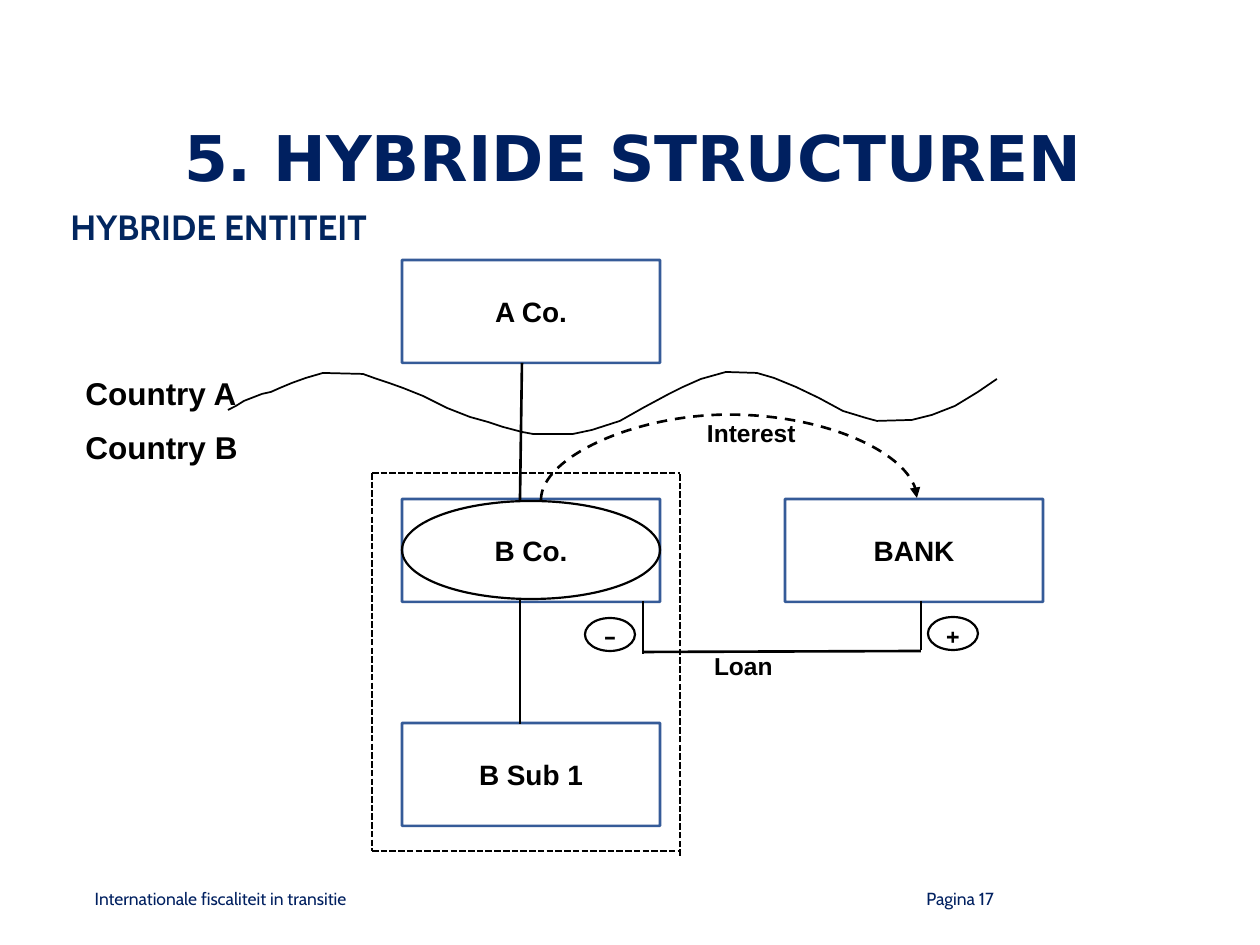
from dataclasses import dataclass

from lxml.etree import SubElement
from pptx import Presentation
from pptx.dml.color import RGBColor
from pptx.enum.dml import MSO_LINE as DASH
from pptx.enum.shapes import MSO_CONNECTOR as CONN, MSO_SHAPE as SHAPE
from pptx.enum.text import MSO_ANCHOR as ANCHOR, PP_ALIGN as ALIGN
from pptx.oxml.ns import qn
from pptx.util import Pt

PX = 914400 / 126


@dataclass(frozen=True)
class Theme:
    navy: str = "002060"
    heading: str = "02265F"
    box_line: str = "03327F"
    black: str = "000000"
    title_size: int = 36
    heading_size: int = 20
    country_size: int = 18
    box_size: int = 16
    label_size: int = 14
    footer_size: int = 10
    title_font: str = "DejaVu Sans"
    label_font: str = "Arial"
    body_font: str = "Cabin"


def write(sp, text, size, font, color, bold=True, align=ALIGN.LEFT, anchor=ANCHOR.TOP, inset=None):
    """Put one formatted line of text in a shape; inset is in px."""
    tf = sp.text_frame
    tf.word_wrap = True
    tf.vertical_anchor = anchor
    if inset is not None:
        tf.margin_left = tf.margin_right = tf.margin_top = tf.margin_bottom = round(inset * PX)
    tf.text = text
    p = tf.paragraphs[0]
    p.alignment = align
    f = p.runs[0].font
    f.size, f.name, f.bold = Pt(size), font, bold
    f.color.rgb = RGBColor.from_string(color)


def outline(sp, color, width, dash=None):
    """Give a shape or connector a plain line and no shadow."""
    sp.line.color.rgb = RGBColor.from_string(color)
    sp.line.width = Pt(width)
    if dash:
        sp.line.dash_style = dash
    if hasattr(sp, "fill"):
        sp.fill.background()
        sp.shadow.inherit = False
    else:
        SubElement(sp._element.spPr, qn("a:effectLst"))


t = Theme()
prs = Presentation()
prs.slide_width, prs.slide_height = round(1260 * PX), round(945 * PX)
s = prs.slides.add_slide(prs.slide_layouts[5])
shapes = s.shapes

title = shapes.title
title.left, title.top, title.width, title.height = [round(v * PX) for v in (57, 96, 1152, 120)]
write(title, "5. HYBRIDE STRUCTUREN", t.title_size, t.title_font, t.navy,
      align=ALIGN.CENTER, anchor=ANCHOR.MIDDLE)

# Companies
for name, x, y in [("A Co.", 402, 260), ("B Co.", 402, 499),
                   ("B Sub 1", 402, 723), ("BANK", 785, 499)]:
    sp = shapes.add_shape(SHAPE.RECTANGLE, *[round(v * PX) for v in (x, y, 258, 103)])
    outline(sp, t.box_line, 1.5)
    line_color = sp._element.spPr.find(".//" + qn("a:srgbClr"))
    SubElement(line_color, qn("a:alpha"), val="80000")
    write(sp, name, t.box_size, t.label_font, t.black,
          align=ALIGN.CENTER, anchor=ANCHOR.MIDDLE, inset=5)

# Hybrid entity and the signs on the loan
for sign, x, y, w, h in [("", 402, 501, 258, 98), ("-", 585, 618, 50, 33), ("+", 928, 617, 50, 33)]:
    sp = shapes.add_shape(SHAPE.OVAL, *[round(v * PX) for v in (x, y, w, h)])
    outline(sp, t.black, 1.25)
    if sign:
        write(sp, sign, t.country_size, t.body_font, t.black, bold=False,
              align=ALIGN.CENTER, anchor=ANCHOR.MIDDLE, inset=5)

# Ownership lines, loan lines and the dashed group border
solid = [(522, 363, 520, 500), (520, 598, 520, 724),
         (921, 601, 921, 650), (643, 601, 643, 654), (643, 652, 921, 651)]
border = [(372, 473, 680, 473), (372, 851, 680, 851),
          (372, 473, 372, 851), (680, 856, 680, 473)]
for ends, width, dash in [(solid, 1.5, None), (border, 1.25, DASH.SQUARE_DOT)]:
    for end in ends:
        line = shapes.add_connector(CONN.STRAIGHT, *[round(v * PX) for v in end])
        outline(line, t.black, width, dash)

# Interest arc: a thin upright curve turned a quarter, bulging 43 times its width
arc = shapes.add_connector(CONN.CURVE, *[round(v * PX) for v in (730, 687, 728, 311)])
outline(arc, t.black, 1.5, DASH.DASH)
SubElement(arc.line._get_or_add_ln(), qn("a:tailEnd"), type="triangle")
arc_pr = arc._element.spPr
arc_pr.find(qn("a:xfrm")).set("rot", "5400000")
guides = arc_pr.find(".//" + qn("a:avLst"))
SubElement(guides, qn("a:gd"), name="adj1", fmla="val 4300000")

# Border between the two countries
wave = [(228, 410), (236, 406), (244, 401), (262, 394), (271, 392), (280, 388), (292, 383),
        (306, 378), (323, 373), (363, 374), (374, 378), (389, 383), (403, 388), (423, 396),
        (447, 408), (470, 417), (488, 422), (503, 427), (522, 432), (533, 434), (573, 434),
        (592, 430), (620, 421), (643, 408), (669, 394), (683, 387), (701, 379), (726, 372),
        (757, 373), (774, 378), (796, 387), (819, 398), (843, 411), (866, 418), (877, 421),
        (912, 420), (932, 415), (955, 406), (978, 392), (997, 379)]
builder = shapes.build_freeform(*wave[0], scale=PX)
builder.add_line_segments(wave[1:], close=False)
outline(builder.convert_to_shape(), t.black, 1)

# Labels and footer
country = dict(size=t.country_size, font=t.label_font, color=t.black)
label = dict(size=t.label_size, font=t.label_font, color=t.black, inset=5)
footer = dict(size=t.footer_size, font=t.body_font, color=t.navy, bold=False)
heading = dict(size=t.heading_size, font=t.body_font, color=t.heading)
for text, box, style in [
    ("HYBRIDE ENTITEIT", (58, 199, 1150, 50), heading),
    ("Country A", (73, 368, 209, 50), country),
    ("Country B", (73, 422, 209, 50), country),
    ("Interest", (702, 413, 117, 40), label),
    ("Loan", (709, 646, 147, 40), label),
    ("Internationale fiscaliteit in transitie", (21, 882, 399, 50), footer | {"align": ALIGN.CENTER}),
    ("Pagina 17", (914, 882, 305, 32), footer | {"anchor": ANCHOR.MIDDLE}),
]:
    tb = shapes.add_textbox(*[round(v * PX) for v in box])
    write(tb, text, **style)

prs.save("out.pptx")
